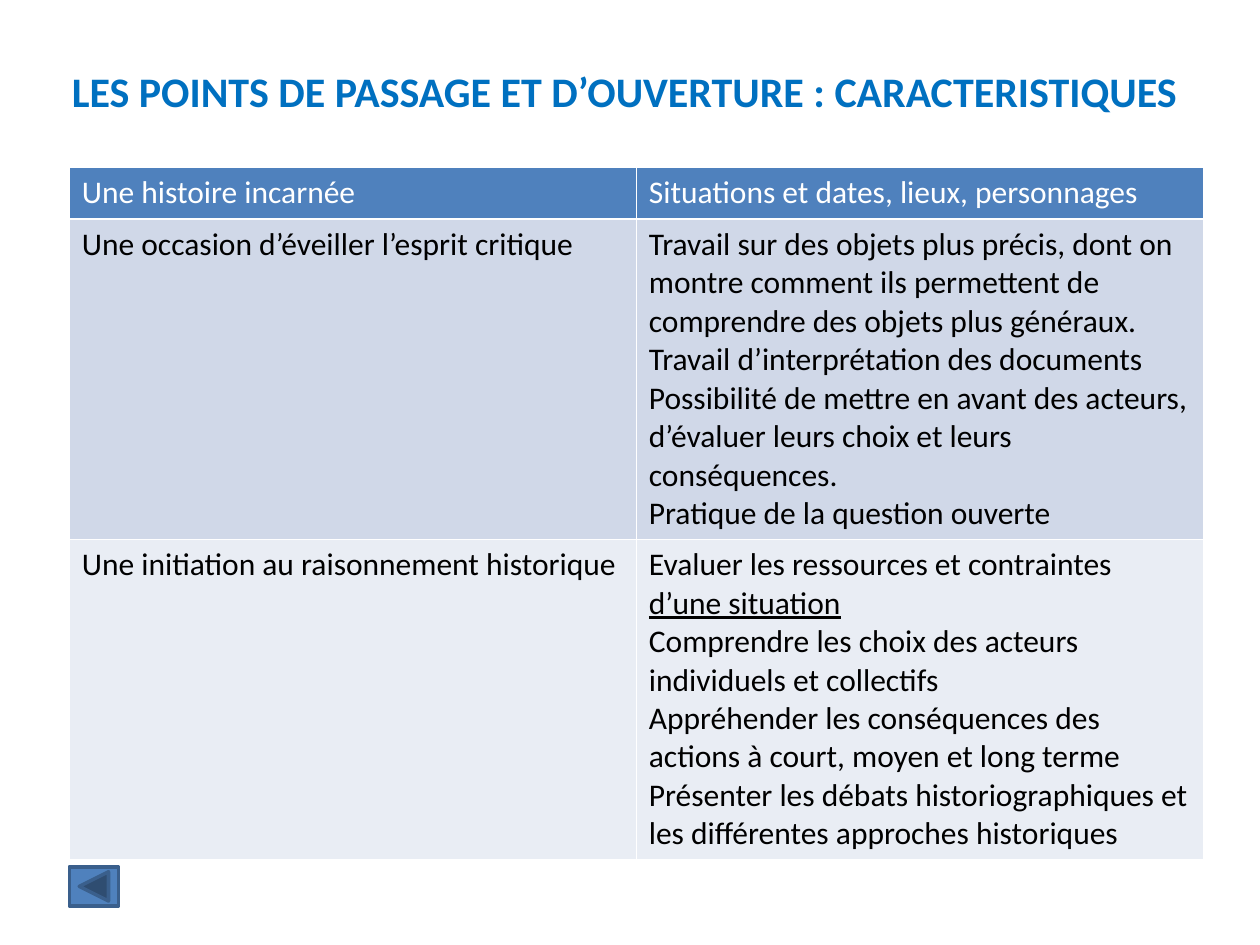
import pptx
import pptx.util
import pptx.dml.color
import pptx.enum.shapes
import pptx.enum.text

Inches = pptx.util.Inches
Pt = pptx.util.Pt
RGBColor = pptx.dml.color.RGBColor

WHITE = RGBColor(0xFF, 0xFF, 0xFF)
BLACK = RGBColor(0x00, 0x00, 0x00)
TITLE_BLUE = RGBColor(0x00, 0x70, 0xC0)
HEADER_BLUE = RGBColor(0x4F, 0x81, 0xBD)
OUTLINE_BLUE = RGBColor(0x3A, 0x5F, 0x8C)
DARK_BAND = RGBColor(0xD0, 0xD8, 0xE8)
LIGHT_BAND = RGBColor(0xE9, 0xED, 0xF4)
FONT = "Calibri"

UNDERLINED = "d’une situation"

# Row height, fill, text colour, then the text of each cell
ROWS = [
    (0.41, HEADER_BLUE, WHITE, [
        ["Une histoire incarnée"],
        ["Situations et dates, lieux, personnages"],
    ]),
    (2.5, DARK_BAND, BLACK, [
        ["Une occasion d’éveiller l’esprit critique"],
        ["Travail sur des objets plus précis, dont on montre comment ils "
         "permettent de comprendre des objets plus généraux.",
         "Travail d’interprétation des documents",
         "Possibilité de mettre en avant des acteurs, d’évaluer leurs choix "
         "et leurs conséquences.",
         "Pratique de la question ouverte"],
    ]),
    (2.5, LIGHT_BAND, BLACK, [
        ["Une initiation au raisonnement historique"],
        ["Evaluer les ressources et contraintes ",
         "Comprendre les choix des acteurs individuels et collectifs",
         "Appréhender les conséquences des actions à court, moyen et long terme",
         "Présenter les débats historiographiques et les différentes "
         "approches historiques"],
    ]),
]

presentation = pptx.Presentation()
presentation.slide_width = Inches(10)
presentation.slide_height = Inches(7.5)
slide = presentation.slides.add_slide(presentation.slide_layouts[5])

# Title
title = slide.shapes.title
title.left, title.top = Inches(0.47), Inches(0.47)
title.width, title.height = Inches(9.53), Inches(0.5)
title.text_frame.text = "LES POINTS DE PASSAGE ET D’OUVERTURE : CARACTERISTIQUES"
title.text_frame.word_wrap = True
title.text_frame.vertical_anchor = pptx.enum.text.MSO_ANCHOR.TOP
title_paragraph = title.text_frame.paragraphs[0]
title_paragraph.alignment = pptx.enum.text.PP_ALIGN.LEFT
title_font = title_paragraph.runs[0].font
title_font.name = FONT
title_font.size = Pt(24)
title_font.bold = True
title_font.color.rgb = TITLE_BLUE

# Table
table = slide.shapes.add_table(
    len(ROWS), 2, Inches(0.55), Inches(1.33), Inches(9), Inches(5.41)).table
for row_index, (height, fill, color, texts) in enumerate(ROWS):
    table.rows[row_index].height = Inches(height)
    for column_index, lines in enumerate(texts):
        cell = table.cell(row_index, column_index)
        cell.fill.solid()
        cell.fill.fore_color.rgb = fill
        cell.text_frame.text = "\n".join(lines)
        if lines[0].startswith("Evaluer"):
            run = cell.text_frame.paragraphs[0].add_run()
            run.text = UNDERLINED
            run.font.underline = True
        for paragraph in cell.text_frame.paragraphs:
            for run in paragraph.runs:
                run.font.name = FONT
                run.font.size = Pt(18)
                run.font.bold = False
                run.font.color.rgb = color

# Back button
button = slide.shapes.add_shape(
    pptx.enum.shapes.MSO_SHAPE.ACTION_BUTTON_BACK_OR_PREVIOUS,
    Inches(0.55), Inches(6.88), Inches(0.39), Inches(0.31))
button.shadow.inherit = False
button.fill.solid()
button.fill.fore_color.rgb = HEADER_BLUE
button.line.color.rgb = OUTLINE_BLUE
button.line.width = Pt(2)

presentation.save("out.pptx")
